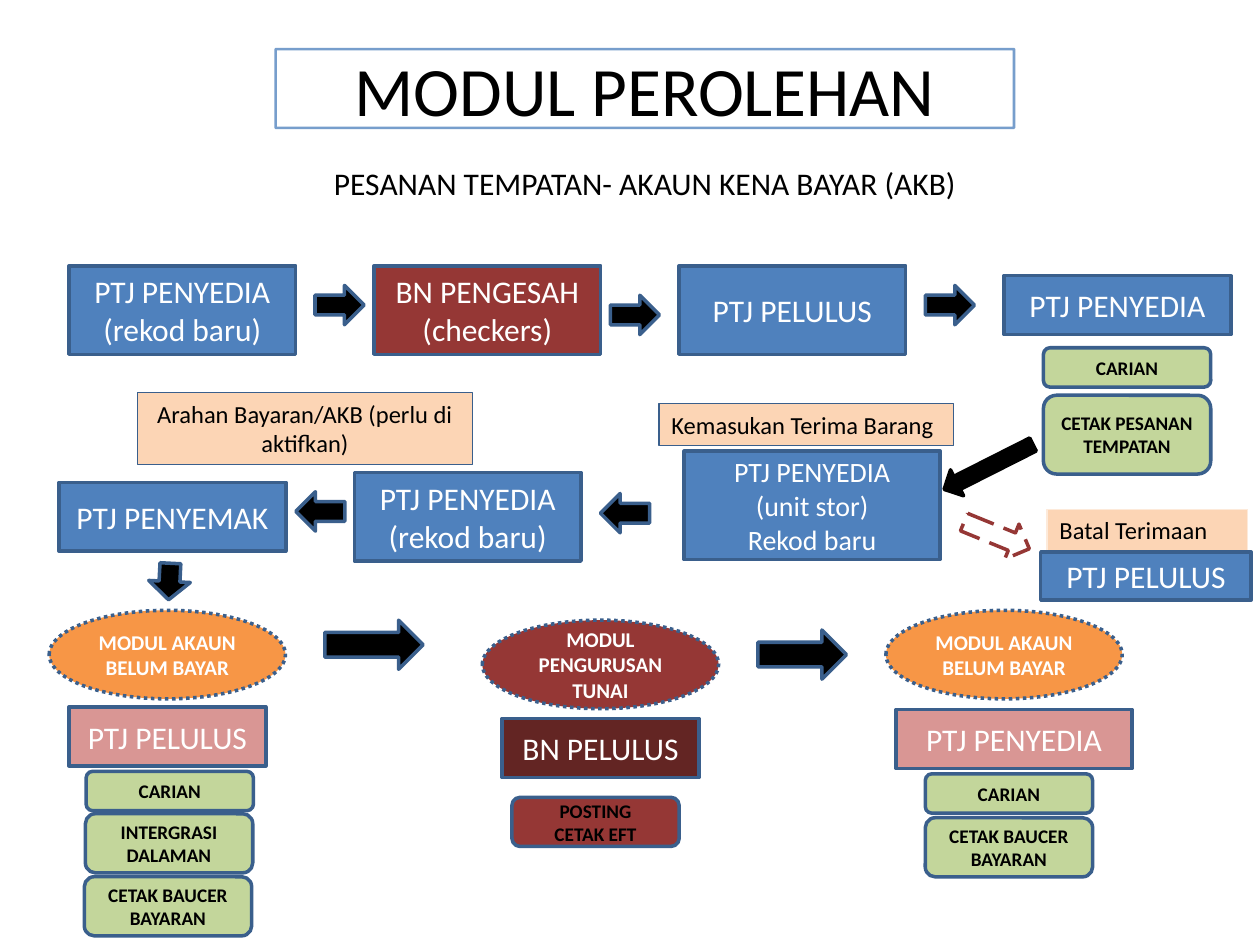
from pptx import Presentation
from pptx.dml.color import RGBColor
from pptx.enum.dml import MSO_LINE as Dash
from pptx.enum.shapes import MSO_SHAPE as Shape
from pptx.enum.text import MSO_ANCHOR as Anchor, PP_ALIGN as Align
from pptx.oxml.ns import qn
from pptx.util import Pt
from lxml.etree import SubElement

FONT = "Calibri"
BLACK = RGBColor(0x00, 0x00, 0x00)
WHITE = RGBColor(0xFF, 0xFF, 0xFF)
BLUE = RGBColor(0x4F, 0x81, 0xBD)
NAVY = RGBColor(0x3A, 0x5F, 0x8C)
RED = RGBColor(0x95, 0x37, 0x35)
MAROON = RGBColor(0x63, 0x25, 0x23)
PINK = RGBColor(0xD9, 0x96, 0x94)
ORANGE = RGBColor(0xF7, 0x96, 0x46)
GREEN = RGBColor(0xC3, 0xD6, 0x9B)
PEACH = RGBColor(0xFC, 0xD5, 0xB5)
CREAM = RGBColor(0xFD, 0xEA, 0xDA)


def write(sp, text, size=18, color=BLACK, bold=False, align=Align.CENTER,
          anchor=Anchor.MIDDLE):
    tf = sp.text_frame
    tf.word_wrap = True
    tf.vertical_anchor = anchor
    for i, line in enumerate(text.split("\n")):
        p = tf.add_paragraph() if i else tf.paragraphs[0]
        p.alignment = align
        r = p.add_run()
        r.text = line
        r.font.name = FONT
        r.font.size = Pt(size)
        r.font.bold = bold
        r.font.color.rgb = color


def add_box(slide, kind, at, fill=None, line=NAVY, width=2, dash=None):
    sp = slide.shapes.add_shape(kind, *map(Pt, at))
    sp.shadow.inherit = False
    if fill is None:
        sp.fill.background()
    else:
        sp.fill.solid()
        sp.fill.fore_color.rgb = fill
    sp.line.color.rgb = line
    sp.line.width = Pt(width)
    if dash:
        sp.line.dash_style = dash
    return sp


def add_title(slide):
    sp = add_box(slide, Shape.RECTANGLE, (157.5, 28.1, 422, 45), line=BLUE, width=1.5)
    color = sp.line.fill._xPr.find(qn("a:solidFill"))[0]
    SubElement(color, qn("a:alpha")).set("val", "76000")
    write(sp, "MODUL PEROLEHAN", size=39.6)


def add_subtitle(slide):
    sp = slide.shapes.add_textbox(*map(Pt, (157.5, 90, 422, 29)))
    write(sp, "PESANAN TEMPATAN- AKAUN KENA BAYAR (AKB)", anchor=Anchor.TOP)


def add_step(slide, text, at, fill=BLUE, size=18):
    write(add_box(slide, Shape.RECTANGLE, at, fill), text, size=size, color=WHITE)


def add_note(slide, text, at, align=Align.LEFT, line=NAVY):
    sp = add_box(slide, Shape.RECTANGLE, at, PEACH, line, width=0.75)
    write(sp, text, size=14, align=align, anchor=Anchor.TOP)


def add_module(slide, text, left, top, fill=ORANGE):
    sp = add_box(slide, Shape.OVAL, (left, top, 135, 50.6), fill, dash=Dash.ROUND_DOT)
    write(sp, text, size=12, color=WHITE, bold=True)


def add_action(slide, text, left, top, height=33.75, fill=GREEN):
    sp = add_box(slide, Shape.ROUNDED_RECTANGLE, (left, top, 95.6, height), fill)
    write(sp, text, size=11, bold=True)


def add_arrow(slide, left, top, width=28.1, height=22.5, angle=0, **style):
    sp = add_box(slide, Shape.RIGHT_ARROW, (left, top, width, height), **style)
    sp.rotation = angle


def main():
    prs = Presentation()
    prs.slide_width, prs.slide_height = Pt(720), Pt(540)
    slide = prs.slides.add_slide(prs.slide_layouts[6])

    add_title(slide)
    add_subtitle(slide)

    add_note(slide, "Kemasukan Terima Barang", (376.6, 230.6, 168.5, 24.2))
    add_note(slide, "Arahan Bayaran/AKB (perlu di aktifkan)",
             (78.5, 224.5, 191.5, 41), align=Align.CENTER)
    add_note(slide, "Batal Terimaan", (598.3, 291, 114.5, 24.2), line=CREAM)

    first_row = [("PTJ PENYEDIA\n(rekod baru)", BLUE),
                 ("BN PENGESAH\n(checkers)", RED),
                 ("PTJ PELULUS", BLUE)]
    for i, (text, fill) in enumerate(first_row):
        add_step(slide, text, (39.4 + 174.3 * i, 151.9, 129.6, 50.6), fill)

    steps = [
        ("PTJ PENYEDIA", (573.75, 157.5, 129.6, 33.75), BLUE, 18),
        ("PTJ PENYEDIA\n(unit stor)\nRekod baru", (391, 257.75, 146.2, 62), BLUE, 16),
        ("PTJ PENYEDIA\n(rekod baru)", (202.5, 270, 129.6, 50.6), BLUE, 18),
        ("PTJ PENYEMAK", (33.75, 275.6, 129.6, 39.4), BLUE, 18),
        ("PTJ PELULUS", (594.7, 315.4, 120.3, 27.6), BLUE, 18),
        ("PTJ PELULUS", (39.4, 403.9, 112.5, 33.75), PINK, 18),
        ("BN PELULUS", (286.9, 410.6, 112.5, 33.75), MAROON, 18),
        ("PTJ PENYEDIA", (511.9, 405.4, 135, 33.75), PINK, 18),
    ]
    for text, at, fill, size in steps:
        add_step(slide, text, at, fill, size)

    add_module(slide, "MODUL AKAUN BELUM BAYAR", 28.1, 348.75)
    add_module(slide, "MODUL PENGURUSAN TUNAI", 275.6, 354.4, RED)
    add_module(slide, "MODUL AKAUN BELUM BAYAR", 506.25, 348.75)

    for left, top in [(596.25, 198.75), (49.2, 440.8), (528.75, 442.2)]:
        add_action(slide, "CARIAN", left, top, 22.5)
    add_action(slide, "CETAK PESANAN TEMPATAN", 596.25, 225.9, 45)
    add_action(slide, "INTERGRASI DALAMAN", 48.8, 465)
    for left, top in [(48.2, 501), (528.75, 467.3)]:
        add_action(slide, "CETAK BAUCER BAYARAN", left, top)
    add_action(slide, "POSTING\nCETAK EFT", 292.5, 455.6, 28.1, RED)

    arrows = [
        (180, 163.1), (348.75, 168.75), (528.75, 163.1),
        (343.1, 282, 28.1, 22.5, 180), (169, 281, 28.1, 22.5, 180),
        (86.4, 320.4, 20.9, 23.8, 92.9),
        (185.6, 354.4, 56.25, 28.1), (433.1, 360, 50.6, 28.1),
    ]
    for place in arrows:
        add_arrow(slide, *place, fill=BLACK)
    add_arrow(slide, 536.4, 258.5, 56.9, 16.6, 153.2, fill=BLACK, line=BLACK)
    add_arrow(slide, 549.4, 295.2, 40.3, 21.6, 22.2, line=RED, dash=Dash.LONG_DASH)

    prs.save("out.pptx")


if __name__ == "__main__":
    main()
